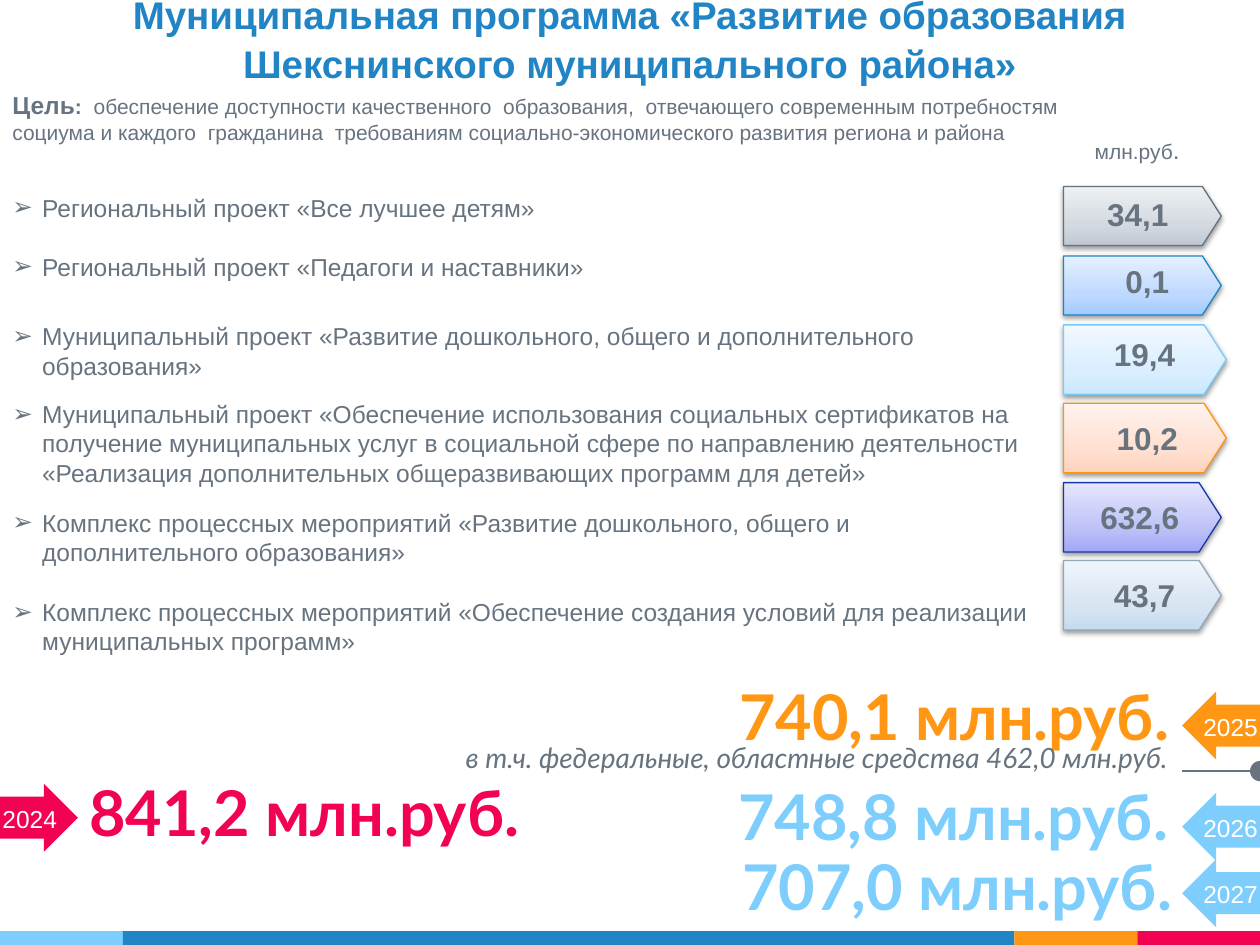
from dataclasses import dataclass
from lxml.etree import SubElement
from pptx import Presentation
from pptx.dml.color import RGBColor
from pptx.enum.shapes import MSO_CONNECTOR as Connector, MSO_SHAPE as Preset
from pptx.enum.text import MSO_ANCHOR as Anchor, MSO_AUTO_SIZE as AutoSize, PP_ALIGN as Align
from pptx.oxml.ns import qn
from pptx.util import Cm, Pt


@dataclass(frozen=True)
class Theme:
    body_font: str = "Arial"
    total_font: str = "Lato"
    text: str = "677480"
    white: str = "FFFFFF"
    blue: str = "2185C5"
    sky: str = "7ECEFD"
    orange: str = "FF9715"
    red: str = "F20253"
    title_size: int = 22
    total_size: int = 36
    value_size: int = 18
    note_size: int = 16
    body_size: int = 14
    small_size: int = 12


def set_all(target, values):
    for name, value in values.items():
        setattr(target, name, value)


class SlideBuilder:
    def __init__(self, slide, theme):
        self.slide = slide
        self.theme = theme

    def fill_text(self, shape, paragraphs, style=None, align=Align.LEFT, anchor=Anchor.TOP,
                  inset=None, wrap=True, **spacing):
        frame = shape.text_frame
        set_all(frame, {"word_wrap": wrap, "auto_size": AutoSize.NONE, "vertical_anchor": anchor})
        if inset:
            sides = ("left", "top", "right", "bottom")
            set_all(frame, {f"margin_{side}": Cm(inset) for side in sides})
        for index, runs in enumerate(paragraphs):
            paragraph = frame.paragraphs[0] if index == 0 else frame.add_paragraph()
            set_all(paragraph, {"alignment": align, **spacing})
            for text, changes in runs:
                run = paragraph.add_run()
                run.text = text
                self.style_font(run.font, {**(style or {}), **changes})

    def style_font(self, font, changes):
        values = {"name": self.theme.body_font, "size": self.theme.body_size,
                  "color": self.theme.text, "bold": False, **changes}
        font.color.rgb = RGBColor.from_string(values.pop("color"))
        values["size"] = Pt(values["size"])
        set_all(font, values)

    def title(self, text, box):
        shape = self.slide.shapes.title
        set_all(shape, dict(zip(("left", "top", "width", "height"), map(Cm, box))))
        style = {"size": self.theme.title_size, "color": self.theme.blue, "bold": True}
        self.fill_text(shape, [[(text, style)]], align=Align.CENTER, anchor=Anchor.BOTTOM,
                       inset=0.25, line_spacing=1.06)

    def text(self, paragraphs, box, **options):
        if isinstance(paragraphs, str):
            paragraphs = [[(paragraphs, {})]]
        shape = self.slide.shapes.add_textbox(*map(Cm, box))
        self.fill_text(shape, paragraphs, **options)
        return shape

    def bullet(self, text, box):
        shape = self.text(text, box)
        properties = shape.text_frame.paragraphs[0]._p.get_or_add_pPr()
        properties.set("marL", str(Cm(0.6)))
        properties.set("indent", str(-Cm(0.6)))
        SubElement(properties, qn("a:buFont"), typeface=self.theme.body_font)
        SubElement(properties, qn("a:buChar"), char="➢")

    def block(self, preset, box, color, rotation=0, adjustments=()):
        shape = self.slide.shapes.add_shape(preset, *map(Cm, box))
        shape.shadow.inherit = False
        shape.rotation = rotation
        for index, value in enumerate(adjustments):
            shape.adjustments[index] = value
        shape.fill.solid()
        shape.fill.fore_color.rgb = RGBColor.from_string(color)
        shape.line.fill.background()
        return shape

    def pentagon(self, box, gradient, outline):
        shape = self.block(Preset.PENTAGON, box, outline, adjustments=(0.32,))
        shape.line.color.rgb = RGBColor.from_string(outline)
        shape.line.width = Pt(0.75)
        shape.fill.gradient()
        shape.fill.gradient_angle = 90
        properties = shape._element.spPr
        stops = properties.find(qn("a:gradFill")).find(qn("a:gsLst"))
        for stop in list(stops):
            stops.remove(stop)
        for position, color in zip((0, 35, 100), gradient):
            stop = SubElement(stops, qn("a:gs"), pos=str(position * 1000))
            SubElement(stop, qn("a:srgbClr"), val=color)
        shadow = SubElement(properties.find(qn("a:effectLst")), qn("a:outerShdw"),
                            blurRad=str(Pt(3.1)), dist=str(Pt(1.6)), dir="5400000", rotWithShape="0")
        shadow_color = SubElement(shadow, qn("a:srgbClr"), val="000000")
        SubElement(shadow_color, qn("a:alpha"), val="38000")
        return shape

    def line(self, start, end):
        connector = self.slide.shapes.add_connector(Connector.STRAIGHT, *map(Cm, start + end))
        connector.line.color.rgb = RGBColor.from_string(self.theme.text)
        connector.line.width = Pt(0.75)
        SubElement(connector._element.spPr, qn("a:effectLst"))

    def total(self, text, box, color, align=Align.RIGHT):
        style = {"name": self.theme.total_font, "size": self.theme.total_size,
                 "color": color, "bold": True}
        self.text(text, box, style=style, align=align, anchor=Anchor.BOTTOM, inset=0.25)

    def year(self, text, top, color, arrow_left, label_left, rotation, align):
        self.block(Preset.RIGHT_ARROW, (arrow_left, top, 1.57, 1.37), color, rotation, (0.618, 0.5))
        self.text(text, (label_left, top + 0.28, 1.63, 0.86),
                  style={"color": self.theme.white}, align=align, wrap=False)


def main():
    theme = Theme()
    presentation = Presentation()
    set_all(presentation, {"slide_width": Cm(25.4), "slide_height": Cm(19.05)})
    slide = presentation.slides.add_slide(presentation.slide_layouts[5])
    builder = SlideBuilder(slide, theme)

    left = 0
    for width, color in ((2.48, theme.sky), (17.97, theme.blue),
                         (2.48, theme.orange), (2.47, theme.red)):
        builder.block(Preset.RECTANGLE, (left, 18.77, width, 0.28), color)
        left += width

    builder.title("Муниципальная программа «Развитие образования Шекснинского муниципального района»",
                  (0, 0, 25.4, 1.98))
    goal = [
        [("Цель", {"size": theme.body_size, "bold": True}), (":  ", {"bold": True}),
         ("обеспечение доступности качественного  образования,  отвечающего современным потребностям", {})],
        [("социума и каждого  гражданина  требованиям социально-экономического развития региона и района", {})],
    ]
    builder.text(goal, (0, 1.57, 25.4, 1.6), style={"size": theme.small_size}, anchor=Anchor.MIDDLE)
    unit = [[("млн.руб", {"size": theme.small_size}), (".", {})]]
    builder.text(unit, (21.44, 2.59, 2.97, 0.86), align=Align.CENTER)

    value_format = {"style": {"size": theme.value_size, "bold": True}, "align": Align.CENTER}
    first = builder.pentagon((21.44, 3.76, 3.18, 1.19), ("C0C9D3", "D3D9DF", "EEF1F3"), "64717E")
    builder.fill_text(first, [[("34,1", {})]], anchor=Anchor.BOTTOM, inset=0.25, **value_format)
    values = (
        ("0,1", 5.16, (3.18, 1.19), (21.44, 3.38, 0.99), ("A3CAFF", "BED9FF", "E6F0FF"), "1C83C5"),
        ("19,4", 6.55, (3.28, 1.4), (21.64, 2.87, 1.19), ("CBE8FF", "DAEEFF", "F1F8FF"), "78CAFB"),
        ("10,2", 8.13, (3.28, 1.4), (21.44, 3.38, 1.4), ("FFD3BD", "FFE0D1", "FFF3EE"), "FF940F"),
        ("632,6", 9.73, (3.18, 1.4), (21.44, 3.07, 1.4), ("A1A7F6", "BEC2F7", "E5E7FD"), "1837A9"),
        ("43,7", 11.3, (3.18, 1.4), (21.64, 2.87, 1.4), ("C6DBEE", "D7E5F2", "EFF5FB"), "93A7B9"),
    )
    for text, top, size, (label_left, width, height), gradient, outline in values:
        builder.pentagon((21.44, top, *size), gradient, outline)
        builder.text(text, (label_left, top, width, height), anchor=Anchor.MIDDLE, **value_format)

    projects = (
        ("Региональный проект «Все лучшее детям»", 3.76, 16.87, 0.86),
        ("Региональный проект «Педагоги и наставники»", 4.95, 18.26, 0.86),
        ("Муниципальный проект «Развитие дошкольного, общего и дополнительного образования»",
         6.35, 21.03, 1.45),
        ("Муниципальный проект «Обеспечение использования социальных сертификатов на получение "
         "муниципальных услуг в социальной сфере по направлению деятельности «Реализация "
         "дополнительных общеразвивающих программ для детей»", 7.92, 21.44, 2.06),
        ("Комплекс процессных мероприятий «Развитие дошкольного, общего и дополнительного образования»",
         10.11, 20.04, 1.45),
        ("Комплекс процессных мероприятий «Обеспечение создания условий для реализации "
         "муниципальных программ»", 11.91, 21.23, 1.45),
    )
    for text, top, width, height in projects:
        builder.bullet(text, (0, top, width, height))

    builder.total("841,2 млн.руб.", (1.55, 14.88, 20.88, 2.49), theme.red, Align.LEFT)
    builder.year("2024", 15.8, theme.red, 0, -0.2, 0, Align.LEFT)
    forecasts = (
        ("2025", "740,1 млн.руб.", (13.89, 13.69, 9.93, 1.75), 13.94, theme.orange),
        ("2026", "748,8 млн.руб.", (5.94, 15.75, 17.86, 1.7), 15.98, theme.sky),
        ("2027", "707,0 млн.руб.", (6.02, 16.92, 17.86, 1.93), 17.32, theme.sky),
    )
    for year, amount, box, arrow_top, color in forecasts:
        builder.total(amount, box, color)
        builder.year(year, arrow_top, color, 23.83, 23.98, 180, Align.RIGHT)

    note_style = {"name": theme.total_font, "size": theme.note_size, "italic": True}
    builder.text("в т.ч. федеральные, областные средства 462,0 млн.руб.", (1.65, 14.68, 22.15, 1.3),
                 style=note_style, align=Align.RIGHT, inset=0.25, space_before=Pt(6))
    builder.block(Preset.FLOWCHART_CONNECTOR, (25.2, 15.34, 0.41, 0.41), theme.text)
    builder.line((25.43, 15.54), (23.83, 15.54))

    presentation.save("out.pptx")


if __name__ == "__main__":
    main()
